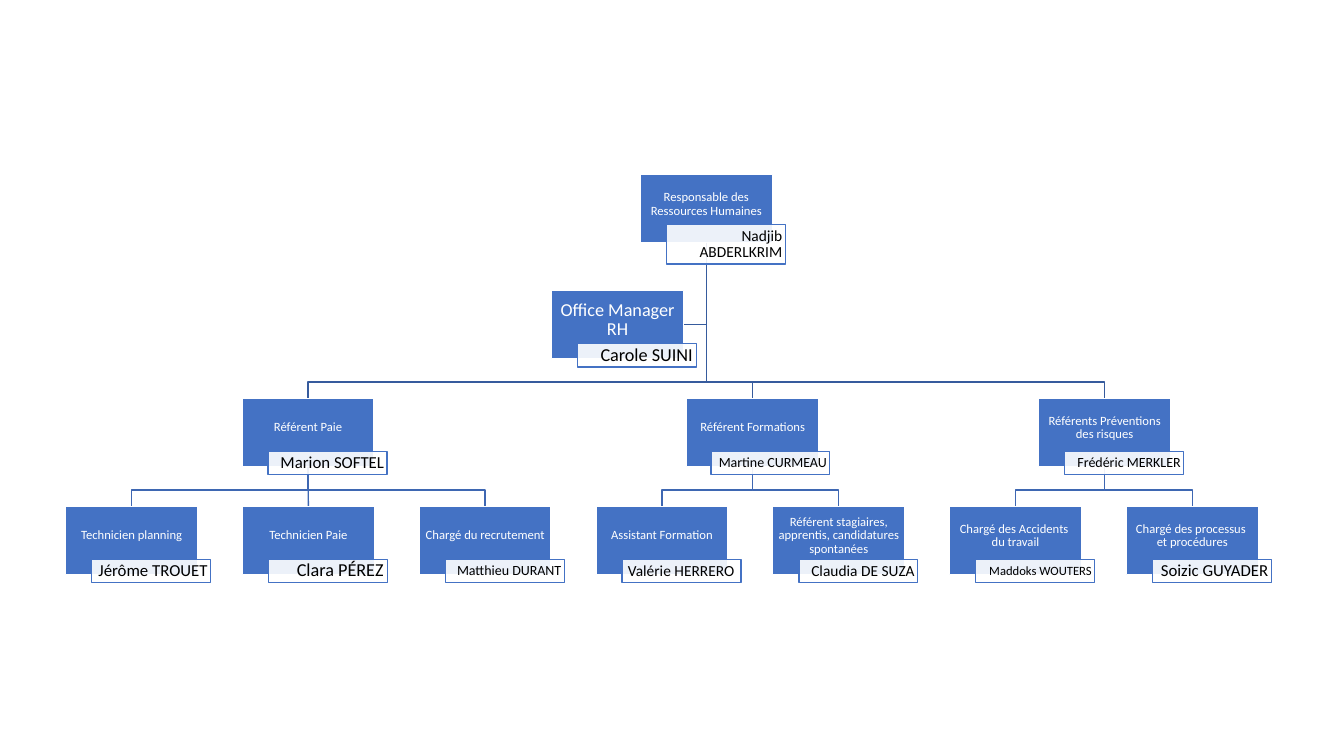
from copy import deepcopy
from dataclasses import dataclass, field

from lxml import etree
from pptx import Presentation
from pptx.dml.color import RGBColor
from pptx.enum.shapes import MSO_CONNECTOR, MSO_SHAPE
from pptx.enum.text import MSO_ANCHOR, PP_ALIGN
from pptx.oxml.ns import qn
from pptx.util import Inches, Pt

RECT = MSO_SHAPE.RECTANGLE
STRAIGHT = MSO_CONNECTOR.STRAIGHT
MIDDLE = MSO_ANCHOR.MIDDLE
CENTER, RIGHT = PP_ALIGN.CENTER, PP_ALIGN.RIGHT

WHITE = RGBColor(0xFF, 0xFF, 0xFF)
BLACK = RGBColor(0, 0, 0)
BLUE = RGBColor(0x44, 0x72, 0xC4)
TOP_LINE = RGBColor(0x36, 0x5B, 0x9D)
LOW_LINE = RGBColor(0x3E, 0x67, 0xB2)

BOX_W, BOX_H = 1.31, 0.68
TAB_W = 1.18
BUS = 0.16  # height of the shared line above a row
LEFT, LAST = 0.65, 11.17
PITCH = (LAST - LEFT) / 6
HEAD_Y, AIDE_Y, LEAD_Y, TEAM_Y = 1.73, 2.88, 3.95, 5.02


@dataclass
class Post:
    role: str
    name: str
    size: int
    x: float
    y: float
    role_size: int = 9
    tab_x: float = 0.26
    tab_y: float = 0.53
    tab_h: float = 0.23
    team: list["Post"] = field(default_factory=list)

    @property
    def mid(self) -> float:
        return self.x + BOX_W / 2

    @property
    def end(self) -> float:
        return self.y + BOX_H


def member(col: int, role: str, name: str, size: int) -> Post:
    return Post(role, name, size, LEFT + col * PITCH, TEAM_Y)


PAY = Post("Référent Paie", "Marion SOFTEL", 12, 2.4, LEAD_Y, team=[
    member(0, "Technicien planning", "Jérôme TROUET", 12),
    member(1, "Technicien Paie", "Clara PÉREZ", 13),
    member(2, "Chargé du recrutement", "Matthieu DURANT", 10),
])
COURSES = Post("Référent Formations", "Martine CURMEAU", 10, 6.81, LEAD_Y, tab_x=0.24, team=[
    member(3, "Assistant Formation", "Valérie HERRERO ", 11),
    member(4, "Référent stagiaires, apprentis, candidatures spontanées", "Claudia DE SUZA", 11),
])
RISKS = Post("Référents Préventions des risques", "Frédéric MERKLER", 10, 10.3, LEAD_Y, team=[
    member(5, "Chargé des Accidents \ndu travail", "Maddoks WOUTERS", 9),
    member(6, "Chargé des processus \net procédures", "Soizic GUYADER", 12),
])
HEAD = Post("Responsable des Ressources Humaines", "Nadjib ABDERLKRIM", 11, 6.35, HEAD_Y,
            tab_y=0.5, tab_h=0.39, team=[PAY, COURSES, RISKS])
AIDE = Post("Office Manager RH", "Carole SUINI", 13, 5.47, AIDE_Y, role_size=13)


def write(shape, text: str, *, size: int, color: RGBColor, align, side: float, foot: float) -> None:
    frame = shape.text_frame
    frame.word_wrap = True
    frame.vertical_anchor = MIDDLE
    frame.margin_left = frame.margin_right = Inches(side)
    frame.margin_top, frame.margin_bottom = Inches(0.01), Inches(foot)
    para = frame.paragraphs[0]
    para.text = text
    para.alignment = align
    para.line_spacing = 0.9
    for run in para.runs:
        run.font.name, run.font.size = "Calibri", Pt(size)
        run.font.color.rgb = color
    # A line break needs the run's size to keep the line height
    for gap in para._p.findall(qn("a:br")):
        gap.insert(0, deepcopy(para.runs[0]._r.rPr))


def add_rect(slide, x: float, y: float, w: float, h: float, fill: RGBColor, line: RGBColor):
    rect = slide.shapes.add_shape(RECT, Inches(x), Inches(y), Inches(w), Inches(h))
    rect.shadow.inherit = False
    rect.fill.solid()
    rect.fill.fore_color.rgb = fill
    rect.line.color.rgb = line
    rect.line.width = Pt(1)
    return rect


def add_box(slide, post: Post):
    box = add_rect(slide, post.x, post.y, BOX_W, BOX_H, BLUE, WHITE)
    write(box, post.role, size=post.role_size, color=WHITE, align=CENTER, side=0.01, foot=0.1)
    return box


def add_tab(slide, post: Post) -> None:
    tab = add_rect(slide, post.x + post.tab_x, post.y + post.tab_y, TAB_W, post.tab_h, WHITE, BLUE)
    tint = tab._element.spPr.find(qn("a:solidFill"))[0]
    etree.SubElement(tint, qn("a:alpha"), val="90000")
    side = 0.04 if post.size > 12 else 0.03
    write(tab, post.name, size=post.size, color=BLACK, align=RIGHT, side=side, foot=0.01)


def add_path(slide, points: list[tuple[float, float]], color: RGBColor) -> None:
    start, *rest = [(Inches(x), Inches(y)) for x, y in points]
    pen = slide.shapes.build_freeform(*start)
    pen.add_line_segments(rest, close=False)
    path = pen.convert_to_shape()
    path.shadow.inherit = False
    path.fill.background()
    path.line.color.rgb = color
    path.line.width = Pt(1)


def add_link(slide, upper, lower, color: RGBColor) -> None:
    link = slide.shapes.add_connector(STRAIGHT, 0, 0, 0, 0)
    link.begin_connect(upper, 2)
    link.end_connect(lower, 0)
    link.line.color.rgb = color
    link.line.width = Pt(1)
    etree.SubElement(link._element.spPr, qn("a:effectLst"))


def join_team(slide, boss: Post, boxes: dict, color: RGBColor) -> None:
    for post in boss.team:
        if abs(post.mid - boss.mid) < 0.01:
            add_link(slide, boxes[boss.role], boxes[post.role], color)
            continue
        bus = post.y - BUS
        add_path(slide, [(boss.mid, boss.end), (boss.mid, bus), (post.mid, bus),
                         (post.mid, post.y)], color)


def main() -> None:
    deck = Presentation()
    deck.slide_width, deck.slide_height = Inches(13.33), Inches(7.5)
    slide = deck.slides.add_slide(deck.slide_layouts[6])

    posts = [HEAD, AIDE]
    for lead in HEAD.team:
        posts += [lead, *lead.team]

    # Tabs come last so that they cover the lines
    boxes = {post.role: add_box(slide, post) for post in posts}
    aide_mid = AIDE.y + BOX_H / 2
    add_path(slide, [(HEAD.mid, HEAD.end), (HEAD.mid, aide_mid), (AIDE.x + BOX_W, aide_mid)], TOP_LINE)
    join_team(slide, HEAD, boxes, TOP_LINE)
    for lead in HEAD.team:
        join_team(slide, lead, boxes, LOW_LINE)
    for post in posts:
        add_tab(slide, post)
    deck.save("out.pptx")


if __name__ == "__main__":
    main()
